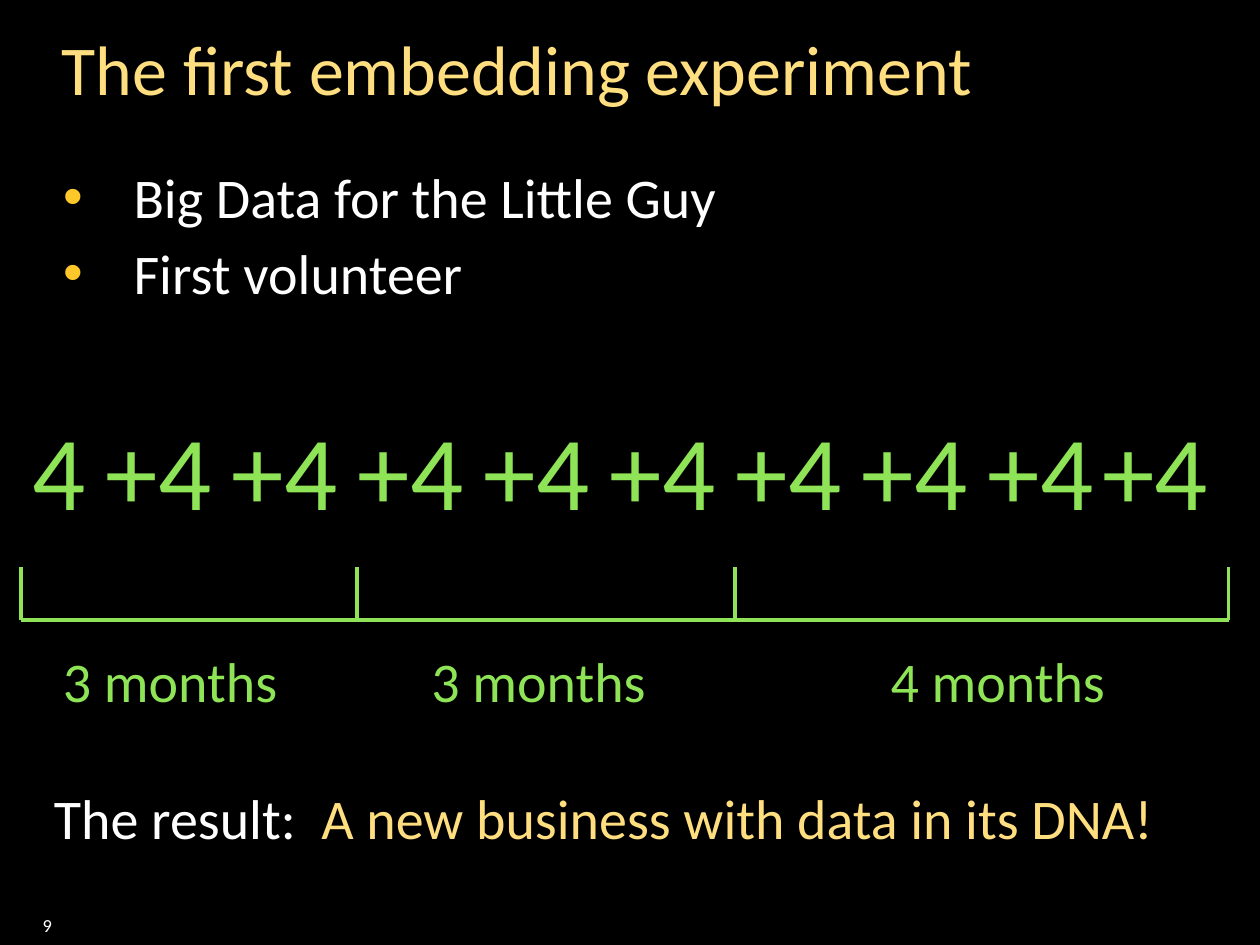
from lxml import etree
from pptx import Presentation
from pptx import util as u
from pptx.dml.color import RGBColor
from pptx.enum import shapes, text
from pptx.oxml import ns

C = {"bg": "000000", "title": "FEDE7F", "text": "FFFFFF",
     "bullet": "FEC82A", "months": "8EE456"}
FONT = "Calibri"
COLS, ROWS = 10, 7.5

prs = Presentation()
prs.slide_width, prs.slide_height = u.Inches(10), u.Inches(7.5)
COL, ROW = prs.slide_width / COLS, prs.slide_height / ROWS


def grid(x, y):
    return round(x * COL), round(y * ROW)


def add_run(p, words, size, color):
    r = p.add_run()
    r.text = words
    r.font.name, r.font.size = FONT, u.Pt(size)
    r.font.color.rgb = RGBColor.from_string(C[color])


def text_box(s, box, runs=(), size=32, side=0, edge=0.05, wrap=True,
             align=text.PP_ALIGN.LEFT, anchor=text.MSO_ANCHOR.TOP):
    x, y, w, h = box
    tf = s.shapes.add_textbox(*grid(x, y), *grid(w, h)).text_frame
    tf.word_wrap, tf.vertical_anchor = wrap, anchor
    tf.margin_left = tf.margin_right = u.Inches(side)
    tf.margin_top = tf.margin_bottom = u.Inches(edge)
    p = tf.paragraphs[0]
    p.alignment = align
    for words, color in runs:
        add_run(p, words, size, color)
    return tf


def bullet(p):
    pPr = p._p.get_or_add_pPr()
    pPr.set("marL", str(u.Inches(0.56)))
    pPr.set("indent", str(-u.Inches(0.56)))
    clr = etree.SubElement(pPr, ns.qn("a:buClr"))
    etree.SubElement(clr, ns.qn("a:srgbClr"), val=C["bullet"])
    etree.SubElement(pPr, ns.qn("a:buFont"), typeface="Arial")
    etree.SubElement(pPr, ns.qn("a:buChar"), char="•")


def bullets(s, box, items):
    tf = text_box(s, box)
    for i, words in enumerate(items):
        p = tf.add_paragraph() if i else tf.paragraphs[0]
        if i:
            p.space_before = u.Pt(5)
        bullet(p)
        add_run(p, words, 32, "text")


def sum_row(s, box, count):
    x, y, w, h = box
    first, step = 0.58, 1
    text_box(s, (x, y, first, h), [("4", "months")], 60)
    for i in range(count - 1):
        left = min(x + first + i * step, x + w - 0.92)
        text_box(s, (left, y, 0.92, h), [("+4", "months")], 60)


def line(group, start, end):
    sp = group.shapes.add_connector(shapes.MSO_CONNECTOR.STRAIGHT,
                                    *grid(*start), *grid(*end))
    sp.line.color.rgb = RGBColor.from_string(C["months"])
    sp.line.width = u.Pt(2.25)
    etree.SubElement(sp._element.spPr, ns.qn("a:effectLst"))


def bracket(s, box, closed):
    x, y, w, h = box
    group = s.shapes.add_group_shape()
    line(group, (x, y + h), (x + w, y + h))
    for tick in (x, x + w) if closed else (x,):
        line(group, (tick, y + h), (tick, y))


def timeline(s, box, ends, labels):
    x, y, w, h = box
    starts = [x] + ends[:-1]
    for left, right, (words, at, width, align) in zip(starts, ends, labels):
        bracket(s, (left, y, right - left, 0.42), right == ends[-1])
        text_box(s, (at, y + 0.58, width, h - 0.58), [(words, "months")],
                 align=align)


def build():
    s = prs.slides.add_slide(prs.slide_layouts[6])
    s.background.fill.solid()
    s.background.fill.fore_color.rgb = RGBColor.from_string(C["bg"])
    left, center = text.PP_ALIGN.LEFT, text.PP_ALIGN.CENTER

    text_box(s, (0.24, 7.21, 0.97, 0.28), [("9", "text")], 10.5, side=0.1)
    text_box(s, (0.49, 0.16, 9, 0.71),
             [("The first embedding experiment", "title")], 40, edge=0,
             anchor=text.MSO_ANCHOR.BOTTOM)
    bullets(s, (0.5, 1.24, 8.99, 0.68),
            ["Big Data for the Little Guy", "First volunteer"])
    sum_row(s, (0.26, 3.17, 9.41, 1.58), 10)
    timeline(s, (0.17, 4.5, 9.58, 1.26), [2.83, 5.83, 9.75],
             [("3 months", 0.5, 1.83, left),
              ("3 months", 3.19, 2.17, center),
              ("4 months", 6.32, 3.2, center)])
    text_box(s, (0.33, 6.17, 9.02, 0.64),
             [("The result:  ", "text"),
              ("A new business with data in its DNA!", "title")],
             side=0.1, wrap=False)


build()
prs.save("out.pptx")
